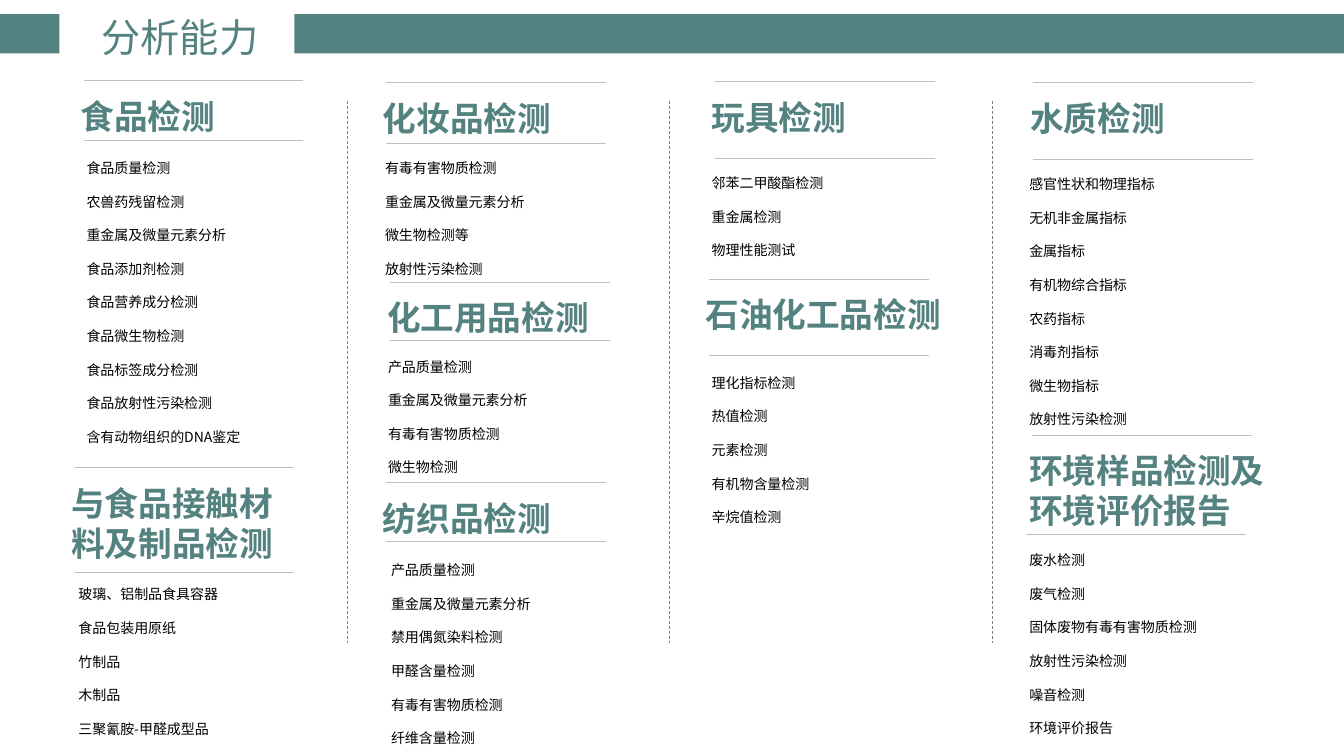
from lxml import etree
from pptx import Presentation
from pptx.dml.color import RGBColor
from pptx.enum import dml, shapes, text
from pptx.oxml import ns
from pptx.util import Inches, Pt

TEAL = RGBColor(0x54, 0x82, 0x80)
BLACK = RGBColor(0, 0, 0)
SILVER = RGBColor(0xBF, 0xBF, 0xBF)
GRAY = RGBColor(0x80, 0x80, 0x80)
FACE = "Noto Sans CJK SC"
SPAN = 2.18

# Rule left, upper rule, lower rule, heading, list left, list top, items, options
PARTS = [
    (0.83, 0.8, 1.39, "食品检测", 0.76, 1.45,
     ["食品质量检测", "农兽药残留检测", "重金属及微量元素分析",
      "食品添加剂检测", "食品营养成分检测", "食品微生物检测",
      "食品标签成分检测", "食品放射性污染检测", "含有动物组织的DNA鉴定"], {}),
    (0.74, 4.64, 5.68, "与食品接触材料及制品检测", 0.68, 5.68,
     ["玻璃、铝制品食具容器", "食品包装用原纸", "竹制品", "木制品",
      "三聚氰胺-甲醛成型品"], {}),
    (3.83, 0.82, 1.42, "化妆品检测", 3.72, 1.45,
     ["有毒有害物质检测", "重金属及微量元素分析", "微生物检测等",
      "放射性污染检测"], {}),
    (3.87, 2.8, 3.38, "化工用品检测", 3.75, 3.42,
     ["产品质量检测", "重金属及微量元素分析", "有毒有害物质检测",
      "微生物检测"], {}),
    (3.83, 4.79, 5.37, "纺织品检测", 3.78, 5.44,
     ["产品质量检测", "重金属及微量元素分析", "禁用偶氮染料检测",
      "甲醛含量检测", "有毒有害物质检测", "纤维含量检测"], {}),
    (7.09, 0.81, 1.57, "玩具检测", 6.96, 1.6,
     ["邻苯二甲酸酯检测", "重金属检测", "物理性能测试"], {}),
    (7.03, 2.77, 3.53, "石油化工品检测", 6.96, 3.58,
     ["理化指标检测", "热值检测", "元素检测", "有机物含量检测",
      "辛烷值检测"], {"wide": 2.56}),
    (10.25, 0.82, 1.58, "水质检测", 10.11, 1.61,
     ["感官性状和物理指标", "无机非金属指标", "金属指标",
      "有机物综合指标", "农药指标", "消毒剂指标", "微生物指标",
      "放射性污染检测"], {}),
    (10.24, 4.32, 5.3, "环境样品检测及环境评价报告", 10.11, 5.34,
     ["废水检测", "废气检测", "固体废物有毒有害物质检测",
      "放射性污染检测", "噪音检测", "环境评价报告"],
     {"wide": 2.62, "shift": -0.06}),
]


def write(frame, lines, size=10, color=BLACK, bold=False, pitch=None,
          gap=0, align=text.PP_ALIGN.LEFT):
    for i, line in enumerate(lines):
        para = frame.add_paragraph() if i else frame.paragraphs[0]
        para.alignment = align
        para.space_before = Pt(gap if i else 0)
        if pitch:
            para.line_spacing = Pt(pitch)
        run = para.add_run()
        run.text = line
        font = run.font
        font.size, font.bold = Pt(size), bold
        font.color.rgb = color
        font.name = FACE
        # East Asian face
        etree.SubElement(font._element, ns.qn("a:ea"), typeface=FACE)


def box(slide, x, y, w, h, lines, inset=0.05, **style):
    frame = slide.shapes.add_textbox(
        Inches(x), Inches(y), Inches(w), Inches(h)).text_frame
    frame.word_wrap = True
    frame.margin_top = Inches(inset)
    write(frame, lines, **style)


def rule(slide, x, y, x2, y2, color, dash=None):
    line = slide.shapes.add_connector(
        shapes.MSO_CONNECTOR.STRAIGHT,
        Inches(x), Inches(y), Inches(x2), Inches(y2))
    line.line.color.rgb = color
    line.line.width = Pt(0.5)
    if dash:
        line.line.dash_style = dash
    etree.SubElement(line._element.spPr, ns.qn("a:effectLst"))


def band(slide, x, w):
    bar = slide.shapes.add_shape(
        shapes.MSO_SHAPE.RECTANGLE,
        Inches(x), Inches(0.14), Inches(w), Inches(0.39))
    bar.shadow.inherit = False
    bar.fill.solid()
    bar.fill.fore_color.rgb = TEAL
    bar.line.fill.background()


def head(slide, label):
    title = slide.shapes.title
    title.left, title.top = Inches(0.9), Inches(0.08)
    title.width, title.height = Inches(1.77), Inches(0.57)
    frame = title.text_frame
    frame.word_wrap = False
    frame.vertical_anchor = text.MSO_ANCHOR.MIDDLE
    write(frame, [label], size=28, color=TEAL, align=text.PP_ALIGN.CENTER)


def part(slide, x, top, low, label, left, y, items, wide=2.48, shift=0):
    rule(slide, x, top, x + SPAN, top, SILVER)
    box(slide, x - 0.13, top + 0.07, wide, low - top - 0.1, [label],
        inset=0.08, size=24, color=TEAL, bold=True, pitch=28.6)
    rule(slide, x + shift, low, x + shift + SPAN, low, SILVER)
    box(slide, left, y, 2.32, len(items) / 3, items, pitch=18, gap=6)


def main():
    deck = Presentation()
    deck.slide_width, deck.slide_height = Inches(13.33), Inches(7.5)
    slide = deck.slides.add_slide(deck.slide_layouts[5])

    # Title band
    band(slide, 0, 0.59)
    band(slide, 2.92, 10.41)
    head(slide, "分析能力")

    # Column dividers
    for x in (3.45, 6.64, 9.84):
        rule(slide, x, 1, x, 6.38, GRAY, dml.MSO_LINE.DASH)

    # Test sections
    for *spot, more in PARTS:
        part(slide, *spot, **more)

    deck.save("out.pptx")


if __name__ == "__main__":
    main()
